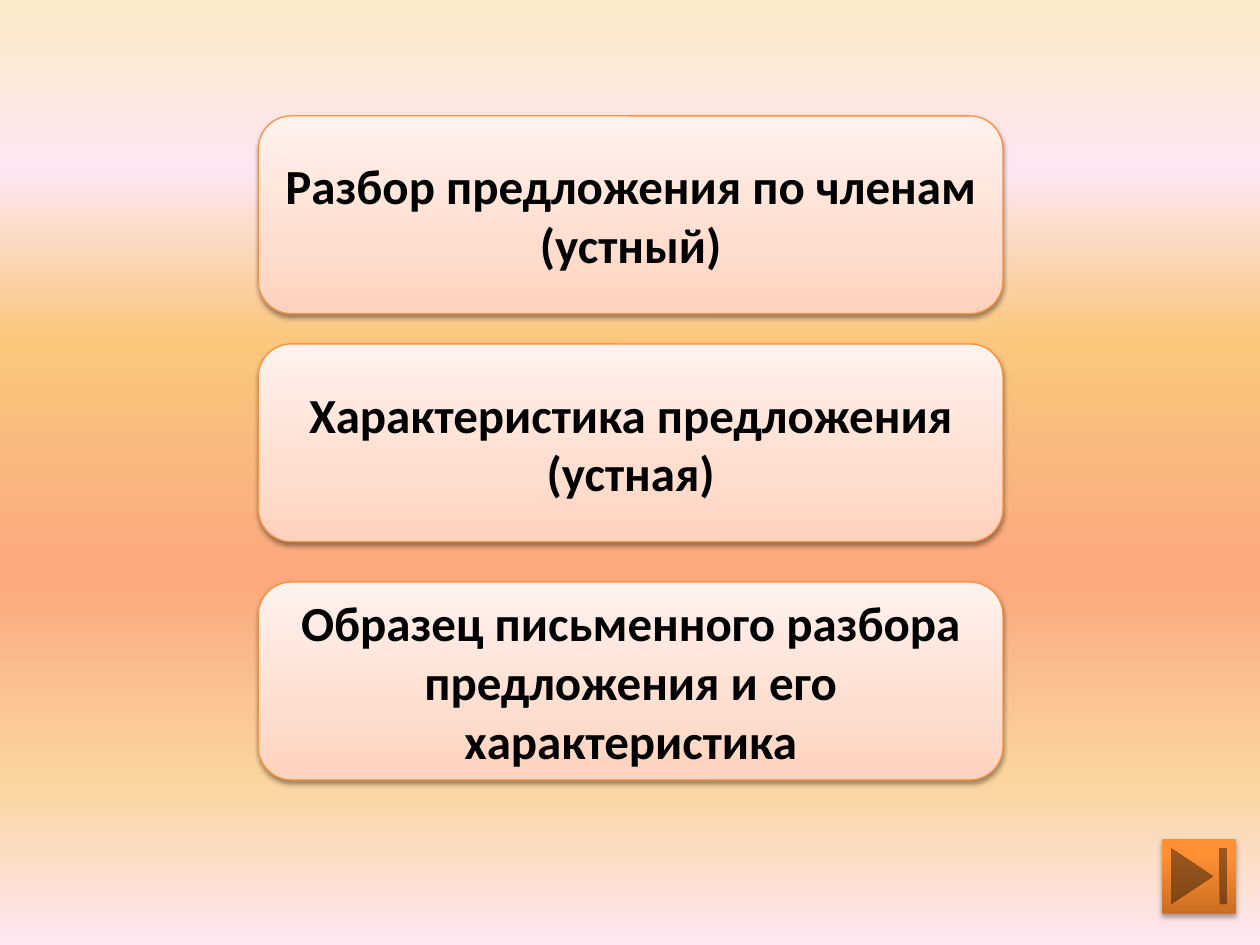
from lxml.etree import SubElement
from pptx import Presentation
from pptx.dml.color import RGBColor
from pptx.enum.shapes import MSO_SHAPE
from pptx.enum.text import MSO_ANCHOR, PP_ALIGN
from pptx.oxml.ns import qn
from pptx.util import Inches, Pt

COLORS = {"text": "000000", "outline": "F69240", "shadow": "000000"}
GRADIENTS = {
    "background": [(0, "FBEAC7"), (18, "FEE7F2"), (36, "FAC77D"),
                   (61, "FBA97D"), (82, "FBD49C"), (100, "FEE7F2")],
    "card": [(0, "FFD2BD"), (35, "FFDED0"), (100, "FFF2ED")],
    "button": [(0, "CC6E20"), (80, "FF9034"), (100, "FF9136")],
}
CARDS = [
    (0.92, ["Разбор предложения по членам (устный)"]),
    (2.73, ["Характеристика предложения", "(устная)"]),
    (4.62, ["Образец письменного разбора предложения и его характеристика"]),
]


def set_gradient(fill, element, stops, angle):
    """Fill with any number of stops; angle is clockwise in degrees."""
    fill.gradient()
    grad = next(element.iter(qn("a:gradFill")))
    for child in list(grad):
        grad.remove(child)
    stop_list = SubElement(grad, qn("a:gsLst"))
    for pos, color in stops:
        gs = SubElement(stop_list, qn("a:gs"), pos=str(pos * 1000))
        SubElement(gs, qn("a:srgbClr"), val=color)
    SubElement(grad, qn("a:lin"), ang=str(angle * 60000), scaled="0")


def set_shadow(sp, alpha, distance):
    sp.shadow.inherit = False
    effects = sp._element.spPr.find(qn("a:effectLst"))
    outer = SubElement(effects, qn("a:outerShdw"), blurRad=str(Pt(3.1)),
                       dist=str(Pt(distance)), dir="5400000", rotWithShape="0")
    color = SubElement(outer, qn("a:srgbClr"), val=COLORS["shadow"])
    SubElement(color, qn("a:alpha"), val=str(alpha * 1000))


def add_card(s, box, lines):
    sp = s.shapes.add_shape(MSO_SHAPE.ROUNDED_RECTANGLE, *map(Inches, box))
    set_gradient(sp.fill, sp._element, GRADIENTS["card"], 270)
    sp.line.color.rgb = RGBColor.from_string(COLORS["outline"])
    sp.line.width = Pt(0.75)
    set_shadow(sp, 38, 1.6)
    tf = sp.text_frame
    tf.word_wrap = True
    tf.vertical_anchor = MSO_ANCHOR.MIDDLE
    for i, line in enumerate(lines):
        p = tf.add_paragraph() if i else tf.paragraphs[0]
        p.alignment = PP_ALIGN.CENTER
        r = p.add_run()
        r.text = line
        r.font.name = "Calibri"
        r.font.size = Pt(28)
        r.font.bold = True
        r.font.color.rgb = RGBColor.from_string(COLORS["text"])


def add_end_button(s, box):
    sp = s.shapes.add_shape(MSO_SHAPE.ACTION_BUTTON_END, *map(Inches, box))
    set_gradient(sp.fill, sp._element, GRADIENTS["button"], 270)
    sp.line.fill.background()
    set_shadow(sp, 35, 1.8)


def main():
    prs = Presentation()
    prs.slide_width, prs.slide_height = Inches(10), Inches(7.5)
    s = prs.slides.add_slide(prs.slide_layouts[6])
    set_gradient(s.background.fill, s._element, GRADIENTS["background"], 90)
    for top, lines in CARDS:
        add_card(s, (2.05, top, 5.91, 1.57), lines)
    add_end_button(s, (9.22, 6.66, 0.59, 0.59))
    prs.save("out.pptx")


if __name__ == "__main__":
    main()
